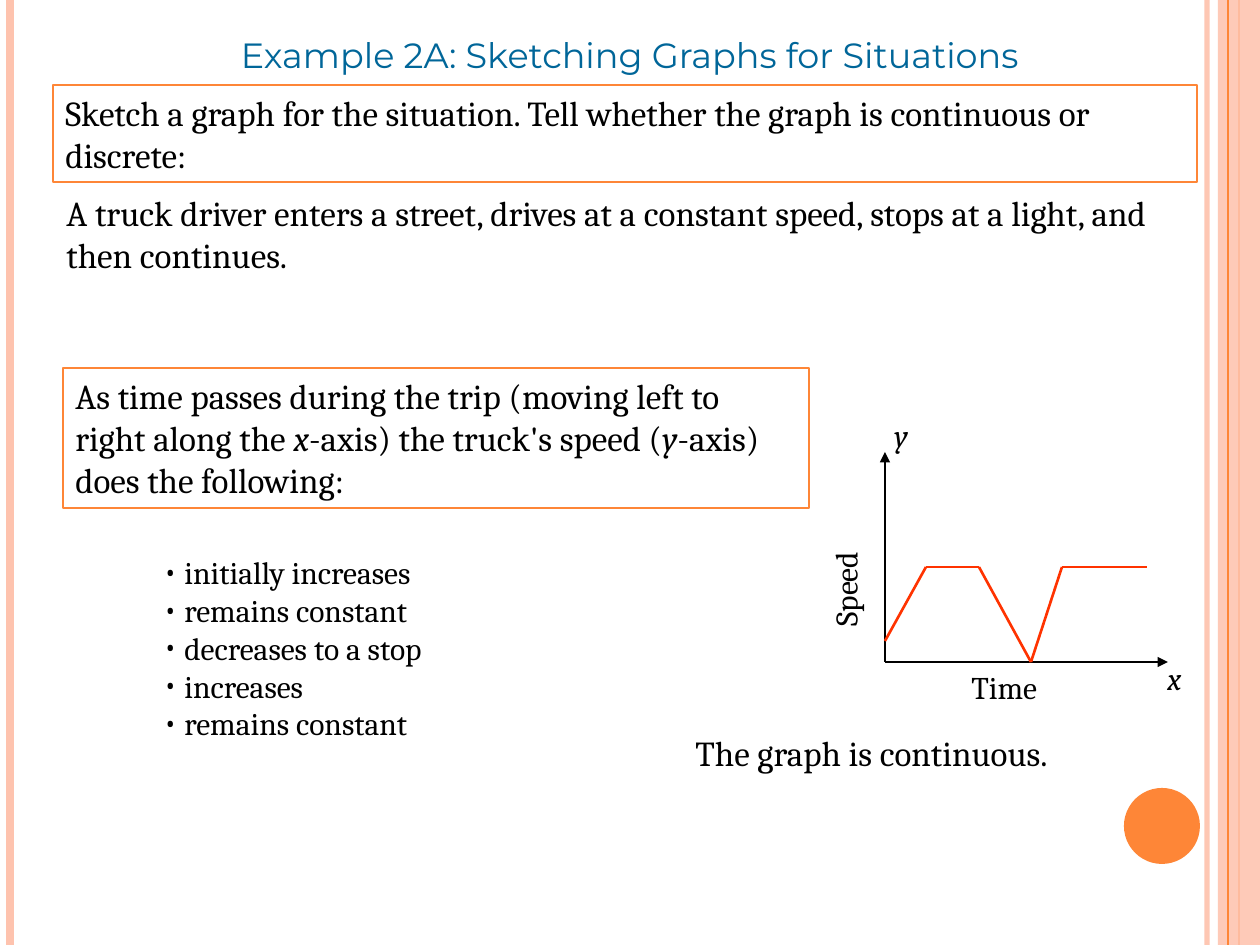
from itertools import pairwise

from lxml import etree
from pptx import Presentation
from pptx.dml.color import RGBColor
from pptx.enum.shapes import MSO_CONNECTOR, MSO_SHAPE
from pptx.enum.text import MSO_ANCHOR, PP_ALIGN
from pptx.oxml.ns import qn
from pptx.util import Pt

PX = 914400 / 126
WIDTH, HEIGHT = 1260, 945

STRAIGHT = MSO_CONNECTOR.STRAIGHT
RECTANGLE, OVAL = MSO_SHAPE.RECTANGLE, MSO_SHAPE.OVAL
LEFT, CENTER = PP_ALIGN.LEFT, PP_ALIGN.CENTER
TOP = MSO_ANCHOR.TOP

ORANGE = RGBColor(0xFE, 0x86, 0x37)
PEACH = RGBColor(0xFE, 0xC3, 0xAE)
BLUE = RGBColor(0x00, 0x66, 0x99)
RED = RGBColor(0xFF, 0x33, 0x00)
BLACK = RGBColor(0x00, 0x00, 0x00)

BODY_FONT, TITLE_FONT = "Cambria", "Montserrat"

STEPS = [
    "initially increases",
    "remains constant",
    "decreases to a stop",
    "increases",
    "remains constant",
]
ORIGIN = (885, 662)
Y_AXIS_END = (885, 452)
X_AXIS_END = (1168, 662)
SPEED_POINTS = [(885, 641), (926, 567), (979, 567), (1031, 662), (1062, 567), (1147, 567)]


def px(*lengths):
    return [round(length * PX) for length in lengths]


def set_opacity(color_parent, percent):
    color = color_parent.find(".//" + qn("a:srgbClr"))
    etree.SubElement(color, qn("a:alpha"), val=str(percent * 1000))


def add_line(slide, start, end, color, width, arrow=False, opacity=100):
    connector = slide.shapes.add_connector(STRAIGHT, *px(*start, *end))
    connector.line.color.rgb = color
    connector.line.width = Pt(width)
    line = connector.line._get_or_add_ln()
    if opacity < 100:
        set_opacity(line, opacity)
    if arrow:
        etree.SubElement(line, qn("a:tailEnd"), type="triangle")
    etree.SubElement(connector._element.spPr, qn("a:effectLst"))


def add_filled_shape(slide, kind, box, color, opacity=100):
    shape = slide.shapes.add_shape(kind, *px(*box))
    shape.shadow.inherit = False
    shape.fill.solid()
    shape.fill.fore_color.rgb = color
    shape.line.fill.background()
    if opacity < 100:
        set_opacity(shape._element.spPr, opacity)


def write_runs(paragraph, runs, size, color=BLACK, font=BODY_FONT, align=LEFT):
    for text, italic in runs:
        run = paragraph.add_run()
        run.text = text
        if italic:
            run.font.italic = True
    paragraph.alignment = align
    paragraph.font.size = Pt(size)
    paragraph.font.name = font
    paragraph.font.color.rgb = color


def add_text(slide, box, text, size=20, italic=False, **style):
    shape = slide.shapes.add_textbox(*px(*box))
    shape.text_frame.word_wrap = True
    write_runs(shape.text_frame.paragraphs[0], [(text, italic)], size, **style)
    return shape


def add_framed_text(slide, box, runs):
    shape = slide.shapes.add_shape(RECTANGLE, *px(*box))
    shape.shadow.inherit = False
    shape.fill.background()
    shape.line.color.rgb = ORANGE
    shape.line.width = Pt(0.75)
    shape.text_frame.word_wrap = True
    shape.text_frame.vertical_anchor = TOP
    write_runs(shape.text_frame.paragraphs[0], runs, 20)


def add_bullets(slide, box, items, indent=21):
    frame = slide.shapes.add_textbox(*px(*box)).text_frame
    frame.word_wrap = True
    margin = px(indent)[0]
    for index, item in enumerate(items):
        paragraph = frame.add_paragraph() if index else frame.paragraphs[0]
        properties = paragraph._p.get_or_add_pPr()
        properties.set("marL", str(margin))
        properties.set("indent", str(-margin))
        etree.SubElement(properties, qn("a:buFont"), typeface=BODY_FONT)
        etree.SubElement(properties, qn("a:buChar"), char="•")
        write_runs(paragraph, [(item, False)], 18)


def add_side_bands(slide):
    def add_stripe(x, color, width, opacity=100):
        add_line(slide, (x, 0), (x, HEIGHT), color, width, opacity=opacity)

    add_stripe(1207, PEACH, 3, opacity=93)
    add_stripe(10, PEACH, 4.5)
    add_stripe(1239, ORANGE, 1.5)
    add_filled_shape(slide, RECTANGLE, (1218, 0, 42, HEIGHT), PEACH, opacity=87)
    add_stripe(1228, ORANGE, 0.75)
    add_filled_shape(slide, OVAL, (1124, 788, 76, 76), ORANGE)


def add_speed_graph(slide):
    for axis_end in (Y_AXIS_END, X_AXIS_END):
        add_line(slide, ORIGIN, axis_end, BLACK, 1.5, arrow=True)
    add_text(slide, (774, 539, 146, 54), "Speed", 18).rotation = 270
    add_text(slide, (959, 662, 121, 54), "Time", 18)
    for start, end in pairwise(SPEED_POINTS):
        add_line(slide, start, end, RED, 1.5)
    add_text(slide, (882, 410, 49, 54), "y", 18, italic=True)
    add_text(slide, (1155, 653, 47, 54), "x", 18, italic=True)


def main():
    presentation = Presentation()
    presentation.slide_width, presentation.slide_height = px(WIDTH, HEIGHT)
    slide = presentation.slides.add_slide(presentation.slide_layouts[6])

    add_side_bands(slide)
    add_text(slide, (0, 27, WIDTH, 55), "Example 2A: Sketching Graphs for Situations",
             color=BLUE, font=TITLE_FONT, align=CENTER)
    add_framed_text(slide, (53, 85, 1144, 97), [
        ("Sketch a graph for the situation. Tell whether the graph is continuous or discrete:", False),
    ])
    add_text(slide, (54, 185, 1152, 97),
             "A truck driver enters a street, drives at a constant speed, "
             "stops at a light, and then continues.")
    add_text(slide, (683, 725, 577, 55), "The graph is continuous.")
    add_speed_graph(slide)
    add_framed_text(slide, (63, 368, 746, 140), [
        ("As time passes during the trip (moving left to right along the ", False),
        ("x", True),
        ("-axis) the truck's speed (", False),
        ("y", True),
        ("-axis) does the following:", False),
    ])
    add_bullets(slide, (151, 547, 438, 204), STEPS)

    presentation.save("out.pptx")


if __name__ == "__main__":
    main()
